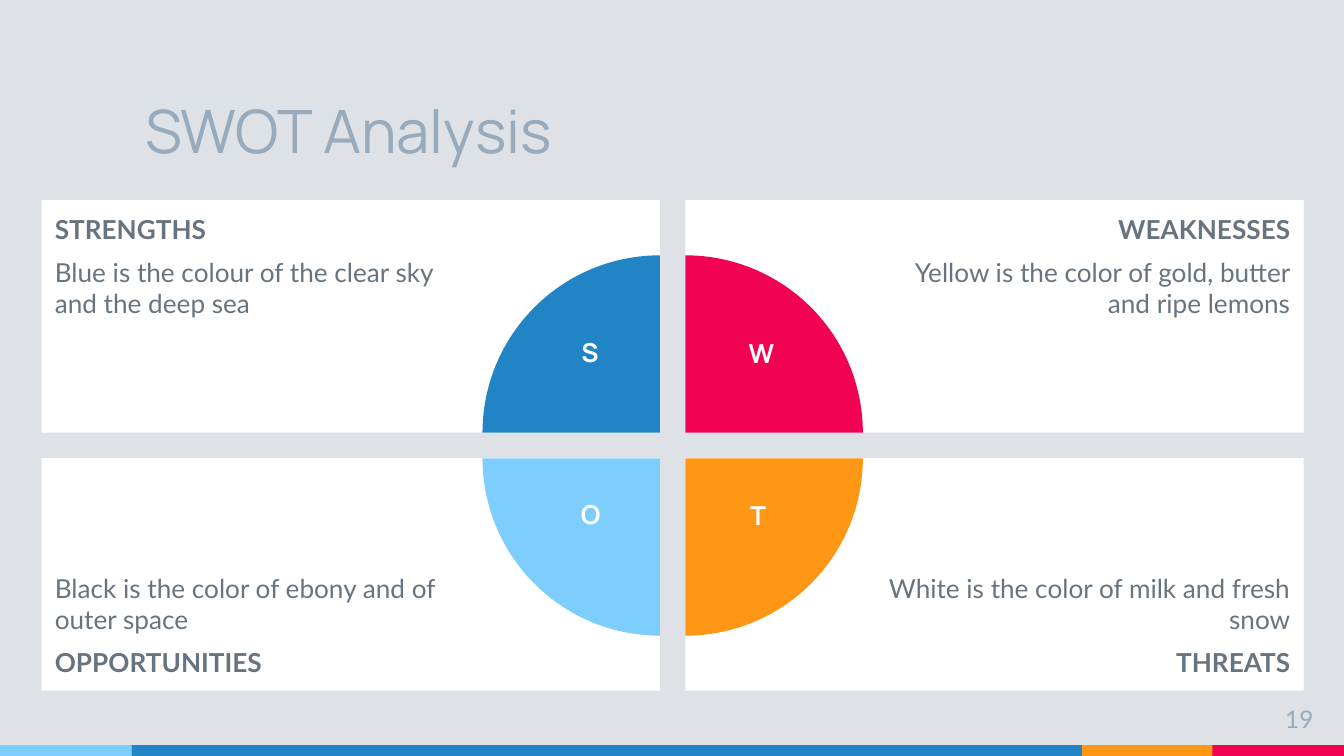
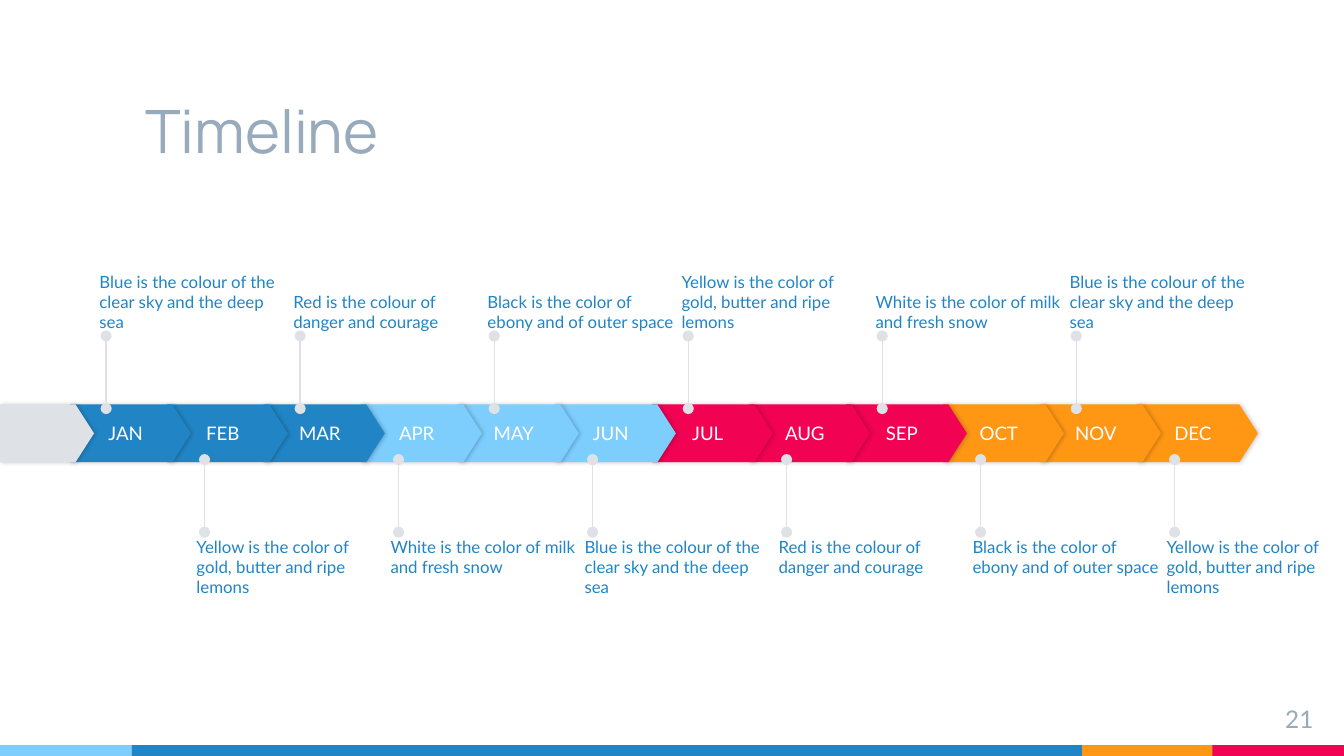
from lxml.etree import SubElement
from pptx import Presentation
from pptx.dml.color import RGBColor
from pptx.enum.shapes import MSO_CONNECTOR as CONN, MSO_SHAPE as SHAPE
from pptx.enum.text import MSO_ANCHOR as ANCHOR, MSO_AUTO_SIZE as AUTO, PP_ALIGN as ALIGN
from pptx.oxml.ns import qn
from pptx.util import Inches, Pt

SLIDE_W = 10
SLIDE_H = SLIDE_W * 9 / 16
BLUE, SKY, RED, ORANGE = "2185C5", "7ECEFD", "F20253", "FF9715"
MIST, WHITE, SLATE, STEEL = "DEE2E6", "FFFFFF", "677480", "97ABBC"
HEAD_FONT, BODY_FONT = "Manrope", "Lato"
PAD = (0.1, 0.1, 0.1, 0.1)

BANDS = [(8.05, 0.98, ORANGE), (9.02, 0.98, RED), (0, 0.98, SKY), (0.98, 7.07, BLUE)]
BAND_H = 0.08
SKY_TEXT = "Blue is the colour of the clear sky and the deep sea"
GOLD_TEXT = "Yellow is the color of gold, butter and ripe lemons"
DANGER_TEXT = "Red is the colour of danger and courage"
MILK_TEXT = "White is the color of milk and fresh snow"
EBONY_TEXT = "Black is the color of ebony and of outer space"

QUADRANTS = [
    (0, 0, "STRENGTHS", SKY_TEXT, BLUE, 0, (4.2, 2.45, 0.38, 0.49)),
    (1, 0, "WEAKNESSES", GOLD_TEXT, RED, 90, (5.31, 2.46, 0.71, 0.48)),
    (0, 1, "OPPORTUNITIES", EBONY_TEXT, SKY, 270, (4.16, 3.66, 0.47, 0.49)),
    (1, 1, "THREATS", MILK_TEXT, ORANGE, 180, (5.44, 3.67, 0.4, 0.48)),
]
MONTHS = "JAN FEB MAR APR MAY JUN JUL AUG SEP OCT NOV DEC".split()
QUARTER_COLORS = [BLUE, SKY, RED, ORANGE]
NOTES = [SKY_TEXT, GOLD_TEXT, DANGER_TEXT, MILK_TEXT, EBONY_TEXT]
MONTH_STEP = 7.94 / 11


def rgb(color):
    """Turn a hex string into a colour."""
    return RGBColor.from_string(color)


def set_frame(tf, insets, anchor=ANCHOR.TOP):
    """Set wrapping, insets and anchor of a text frame."""
    tf.auto_size = AUTO.NONE
    tf.word_wrap = True
    tf.vertical_anchor = anchor
    tf.margin_left, tf.margin_top, tf.margin_right, tf.margin_bottom = map(Inches, insets)


def write(p, text, size, color, font=BODY_FONT, bold=False, align=ALIGN.LEFT, before=0, after=0):
    """Write one formatted run into a paragraph."""
    p.alignment = align
    p.space_before, p.space_after = Pt(before), Pt(after)
    r = p.add_run()
    r.text = text
    r.font.name, r.font.size, r.font.bold = font, Pt(size), bold
    r.font.color.rgb = rgb(color)


def add_text(s, box, text, size, color, insets=PAD, anchor=ANCHOR.TOP, **fmt):
    """Add a text box with one paragraph."""
    tf = s.shapes.add_textbox(*map(Inches, box)).text_frame
    set_frame(tf, insets, anchor)
    write(tf.paragraphs[0], text, size, color, **fmt)


def add_block(s, kind, box, fill, adjust=()):
    """Add a flat filled shape without outline."""
    sp = s.shapes.add_shape(kind, *map(Inches, box))
    sp.shadow.inherit = False
    sp.fill.solid()
    sp.fill.fore_color.rgb = rgb(fill)
    sp.line.fill.background()
    for i, value in enumerate(adjust):
        sp.adjustments[i] = value
    return sp


def add_slide(prs, title, number, background):
    """Add a slide with background, colour bands, title and page number."""
    s = prs.slides.add_slide(prs.slide_layouts[5])
    s.background.fill.solid()
    s.background.fill.fore_color.rgb = rgb(background)
    for left, width, color in BANDS:
        add_block(s, SHAPE.RECTANGLE, (left, SLIDE_H - BAND_H, width, BAND_H), color)
    sp = s.shapes.title
    sp.left, sp.top, sp.width, sp.height = map(Inches, (0.98, 0.39, 7.07, 0.94))
    set_frame(sp.text_frame, PAD, ANCHOR.BOTTOM)
    write(sp.text_frame.paragraphs[0], title, 32, STEEL, font=HEAD_FONT)
    add_text(s, (9.27, 5.14, 0.6, 0.34), str(number), 13, STEEL, align=ALIGN.RIGHT)
    return s


def add_panel(s, col, row, heading, text):
    """Add a white panel whose heading sits at its outer edge."""
    panel = add_block(s, SHAPE.RECTANGLE, (0.31 + 4.79 * col, 1.49 + 1.92 * row, 4.6, 1.73), WHITE)
    tf = panel.text_frame
    insets = (1.5, 0.1, 0.1, 0.1) if col else (0.1, 0.1, 1.5, 0.1)
    set_frame(tf, insets, ANCHOR.BOTTOM if row else ANCHOR.TOP)
    lines = [(heading, True), (text, False)]
    if row:
        lines.reverse()
    for i, (line, bold) in enumerate(lines):
        p = tf.add_paragraph() if i else tf.paragraphs[0]
        write(p, line, 14, SLATE, bold=bold, align=ALIGN.RIGHT if col else ALIGN.LEFT,
              before=6 * i, after=6 * i)


def add_quarter(s, col, row, color, rotation):
    """Add the quarter circle of one quadrant."""
    box = (3.59 + 0.19 * col, 1.9 + 0.19 * row, 2.64, 2.64)
    add_block(s, SHAPE.PIE, box, color, (108, 162)).rotation = rotation


def add_plate(s, left, width, color, text=""):
    """Add a pointed timeline plate with a soft shadow."""
    sp = add_block(s, SHAPE.PENTAGON, (left, 3.01, width, 0.43), color, (0.32,))
    effects = sp.element.spPr.find(qn("a:effectLst"))
    shadow = SubElement(effects, qn("a:outerShdw"), blurRad=str(Pt(2.2)), dist=str(Pt(0.8)),
                        dir="0", algn="ctr", rotWithShape="0")
    black = SubElement(shadow, qn("a:srgbClr"), val="000000")
    SubElement(black, qn("a:alpha"), val="20000")
    if text:
        set_frame(sp.text_frame, (0, 0, 0, 0), ANCHOR.MIDDLE)
        write(sp.text_frame.paragraphs[0], text, 10, WHITE, align=ALIGN.CENTER)


def add_pin(s, x, top, bottom):
    """Add a vertical line with a dot at each end."""
    cx = s.shapes.add_connector(CONN.STRAIGHT, *map(Inches, (x, bottom, x, top)))
    cx.line.color.rgb = rgb(MIST)
    cx.line.width = Pt(0.75)
    ln = cx.element.spPr.find(qn("a:ln"))
    for end in ("a:headEnd", "a:tailEnd"):
        SubElement(ln, qn(end), type="oval")
    SubElement(cx.element.spPr, qn("a:effectLst"))


def add_callout(s, month):
    """Add a month's pin and note, above for even and below for odd months."""
    left = 0.74 + MONTH_STEP * month
    below = month % 2
    add_pin(s, left + (0.06 if below else 0.05), *((3.42, 3.96) if below else (2.5, 3.04)))
    box = (left, 3.99 if below else 1.89, min(1.41, SLIDE_W - left), 0.58)
    add_text(s, box, NOTES[month % len(NOTES)], 9, BLUE, insets=(0, 0, 0, 0),
             anchor=ANCHOR.TOP if below else ANCHOR.BOTTOM)


def build_swot(prs):
    """Build the SWOT slide."""
    s = add_slide(prs, "SWOT Analysis", 19, MIST)
    for col, row, heading, text, *_ in QUADRANTS:
        add_panel(s, col, row, heading, text)
    for col, row, _, _, color, rotation, _ in QUADRANTS:
        add_quarter(s, col, row, color, rotation)
    for _, _, heading, *_, box in QUADRANTS:
        add_text(s, box, heading[0], 14, WHITE, insets=(0.1, 0.05, 0.1, 0.05),
                 font=HEAD_FONT, bold=True, align=ALIGN.CENTER)


def build_timeline(prs):
    """Build the timeline slide."""
    s = add_slide(prs, "Timeline", 21, WHITE)
    for month in reversed(range(len(MONTHS))):
        add_plate(s, 0.52 + MONTH_STEP * month, 0.9, QUARTER_COLORS[month // 3], MONTHS[month])
    add_plate(s, 0, 0.7, MIST)
    for month in (*range(0, 12, 2), *range(1, 12, 2)):
        add_callout(s, month)


def main():
    """Build and save the presentation."""
    prs = Presentation()
    prs.slide_width, prs.slide_height = Inches(SLIDE_W), Inches(SLIDE_H)
    build_swot(prs)
    build_timeline(prs)
    prs.save("out.pptx")


if __name__ == "__main__":
    main()
